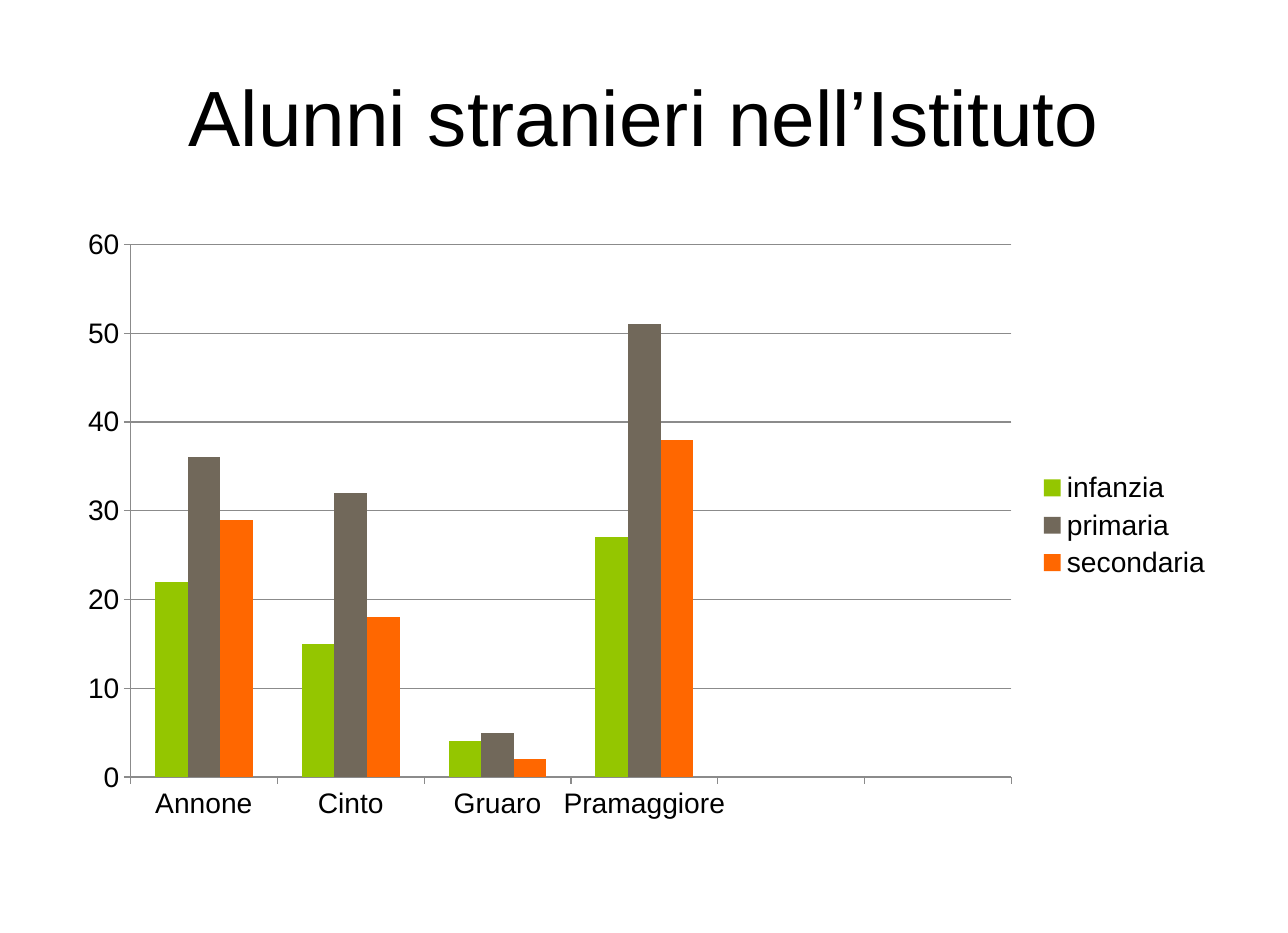
from typing import NamedTuple, Optional

import pptx
import pptx.chart.data
import pptx.dml.color
import pptx.enum.chart
import pptx.enum.text
import pptx.oxml
import pptx.oxml.ns
import pptx.util

WIDE, HIGH = pptx.util.Inches(11.42), pptx.util.Inches(8.27)
FONT = "Arial"
COLORS = {
    "text": "000000",
    "line": "8B8B8B",
    "green": "94C600",
    "brown": "71685A",
    "orange": "FF6700",
}
TOWNS = ["Annone", "Cinto", "Gruaro", "Pramaggiore", "", ""]


class Box(NamedTuple):
    left: float
    top: float
    width: float
    height: float

    def place(self) -> tuple[int, int, int, int]:
        return (
            round(self.left * WIDE),
            round(self.top * HIGH),
            round(self.width * WIDE),
            round(self.height * HIGH),
        )


class School(NamedTuple):
    name: str
    pupils: list[Optional[int]]
    color: str


TITLE = Box(0.05, 0.04, 0.9, 0.167)
CHART = Box(0.05, 0.233, 0.9, 0.66)
PLOT = Box(0.057, 0.044, 0.76, 0.865)
SCHOOLS = [
    School("infanzia", [22, 15, 4, 27, None, None], "green"),
    School("primaria", [36, 32, 5, 51, None, None], "brown"),
    School("secondaria", [29, 18, 2, 38, None, None], "orange"),
]


def paint(key: str) -> pptx.dml.color.RGBColor:
    return pptx.dml.color.RGBColor.from_string(COLORS[key])


def set_font(font, size: float) -> None:
    font.name = FONT
    font.size = pptx.util.Pt(size)
    font.bold = False
    font.color.rgb = paint("text")


def draw_line(form) -> None:
    form.line.color.rgb = paint("line")
    form.line.width = pptx.util.Pt(0.75)


def add_title(slide, text: str) -> None:
    title = slide.shapes.title
    title.left, title.top, title.width, title.height = TITLE.place()
    frame = title.text_frame
    frame.text = text
    frame.word_wrap = True
    frame.vertical_anchor = pptx.enum.text.MSO_ANCHOR.MIDDLE
    frame.margin_left = frame.margin_right = pptx.util.Inches(0.11)
    frame.margin_top = frame.margin_bottom = pptx.util.Inches(0.06)
    line = frame.paragraphs[0]
    line.alignment = pptx.enum.text.PP_ALIGN.CENTER
    set_font(line.runs[0].font, 50)


def set_plot(chart, box: Box) -> None:
    area = chart._chartSpace.chart.plotArea
    for old in area.findall(pptx.oxml.ns.qn("c:layout")):
        area.remove(old)
    parts = "".join(
        f'<c:{tag} val="{value}"/>'
        for tag, value in [
            ("layoutTarget", "inner"),
            ("xMode", "edge"),
            ("yMode", "edge"),
            *zip("xywh", box),
        ]
    )
    area.insert(0, pptx.oxml.parse_xml(
        f'<c:layout {pptx.oxml.ns.nsdecls("c")}>'
        f"<c:manualLayout>{parts}</c:manualLayout></c:layout>"
    ))


def add_chart(slide, schools: list[School]) -> None:
    data = pptx.chart.data.CategoryChartData()
    data.categories = TOWNS
    for school in schools:
        data.add_series(school.name, school.pupils)
    kinds = pptx.enum.chart
    chart = slide.shapes.add_chart(
        kinds.XL_CHART_TYPE.COLUMN_CLUSTERED, *CHART.place(), data
    ).chart
    set_font(chart.font, 18)
    chart.has_title = False
    chart.has_legend = True
    chart.legend.position = kinds.XL_LEGEND_POSITION.RIGHT
    chart.legend.include_in_layout = False
    set_plot(chart, PLOT)

    plot = chart.plots[0]
    plot.gap_width = 150
    plot.overlap = 0
    plot.vary_by_categories = False
    for bars, school in zip(plot.series, schools):
        bars.format.fill.solid()
        bars.format.fill.fore_color.rgb = paint(school.color)
        bars.invert_if_negative = False

    for axis in (chart.category_axis, chart.value_axis):
        axis.major_tick_mark = kinds.XL_TICK_MARK.OUTSIDE
        axis.minor_tick_mark = kinds.XL_TICK_MARK.NONE
        draw_line(axis.format)
    value = chart.value_axis
    value.minimum_scale, value.maximum_scale, value.major_unit = 0, 60, 10
    value.has_major_gridlines = True
    draw_line(value.major_gridlines.format)


def main() -> None:
    deck = pptx.Presentation()
    deck.slide_width, deck.slide_height = WIDE, HIGH
    slide = deck.slides.add_slide(deck.slide_layouts[5])
    add_title(slide, "Alunni stranieri nell’Istituto")
    add_chart(slide, SCHOOLS)
    deck.save("out.pptx")


if __name__ == "__main__":
    main()
